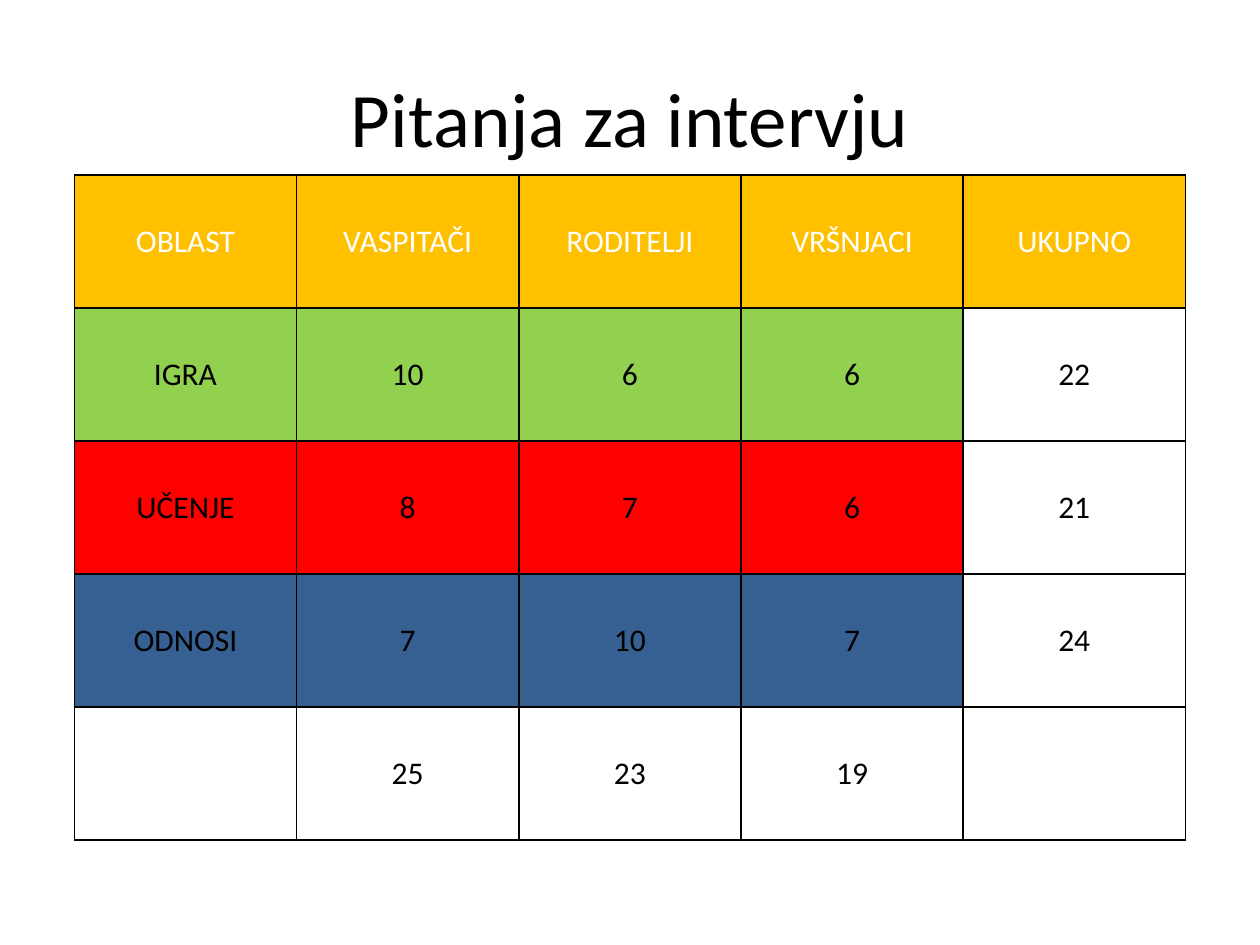
import pptx
import pptx.util
import pptx.dml.color
import pptx.enum.text
import pptx.oxml
import pptx.oxml.ns
from pptx.util import Cm

HUES = {
    "black": "000000",
    "white": "FFFFFF",
    "gold": "FFC000",
    "green": "92D050",
    "red": "FF0000",
    "blue": "376092",
}

ROWS = [
    ("gold", "gold", ["OBLAST", "VASPITAČI", "RODITELJI", "VRŠNJACI", "UKUPNO"]),
    ("green", "white", ["IGRA", "10", "6", "6", "22"]),
    ("red", "white", ["UČENJE", "8", "7", "6", "21"]),
    ("blue", "white", ["ODNOSI", "7", "10", "7", "24"]),
    ("white", "white", ["", "25", "23", "19", ""]),
]


def tint(name):
    return pptx.dml.color.RGBColor.from_string(HUES[name])


def write(frame, text, size=18, hue="black", face="Calibri"):
    para = frame.paragraphs[0]
    para.alignment = pptx.enum.text.PP_ALIGN.CENTER
    para.font.size = pptx.util.Pt(size)
    if text:
        run = para.add_run()
        run.text = text
        run.font.size = pptx.util.Pt(size)
        run.font.name = face
        run.font.bold = False
        run.font.color.rgb = tint(hue)


class Page:
    def __init__(self, deck, edge="black", width=1):
        self.edge = edge
        self.width = width
        self.slide = deck.slides.add_slide(deck.slide_layouts[5])

    def title(self, text, left, top, width, height):
        shape = self.slide.shapes.title
        shape.left, shape.top, shape.width, shape.height = left, top, width, height
        shape.text_frame.vertical_anchor = pptx.enum.text.MSO_ANCHOR.MIDDLE
        write(shape.text_frame, text, size=44)

    def border(self, cell):
        props = cell._tc.get_or_add_tcPr()
        for side in "LRTB":
            props.append(pptx.oxml.parse_xml(
                f'<a:ln{side} {pptx.oxml.ns.nsdecls("a")} w="{pptx.util.Pt(self.width)}">'
                f'<a:solidFill><a:srgbClr val="{HUES[self.edge]}"/></a:solidFill>'
                f'</a:ln{side}>'))

    def cell(self, cell, text, fill, hue):
        self.border(cell)
        cell.fill.solid()
        cell.fill.fore_color.rgb = tint(fill)
        cell.vertical_anchor = pptx.enum.text.MSO_ANCHOR.MIDDLE
        write(cell.text_frame, text, hue=hue)

    def table(self, rows, left, top, width, height):
        count = len(rows[0][2])
        grid = self.slide.shapes.add_table(
            len(rows), count, left, top, width, height).table
        grid.first_row = grid.horz_banding = False
        for r, (fill, last, words) in enumerate(rows):
            for c, word in enumerate(words):
                self.cell(grid.cell(r, c), word,
                          fill=last if c == count - 1 else fill,
                          hue="white" if r == 0 else "black")


def main():
    deck = pptx.Presentation()
    deck.slide_width, deck.slide_height = Cm(25.4), Cm(19.05)
    page = Page(deck)
    page.title("Pitanja za intervju", Cm(1.27), Cm(0.76), Cm(22.86), Cm(3.18))
    page.table(ROWS, Cm(1.5), Cm(3.53), Cm(22.4), Cm(13.4))
    deck.save("out.pptx")


if __name__ == "__main__":
    main()
